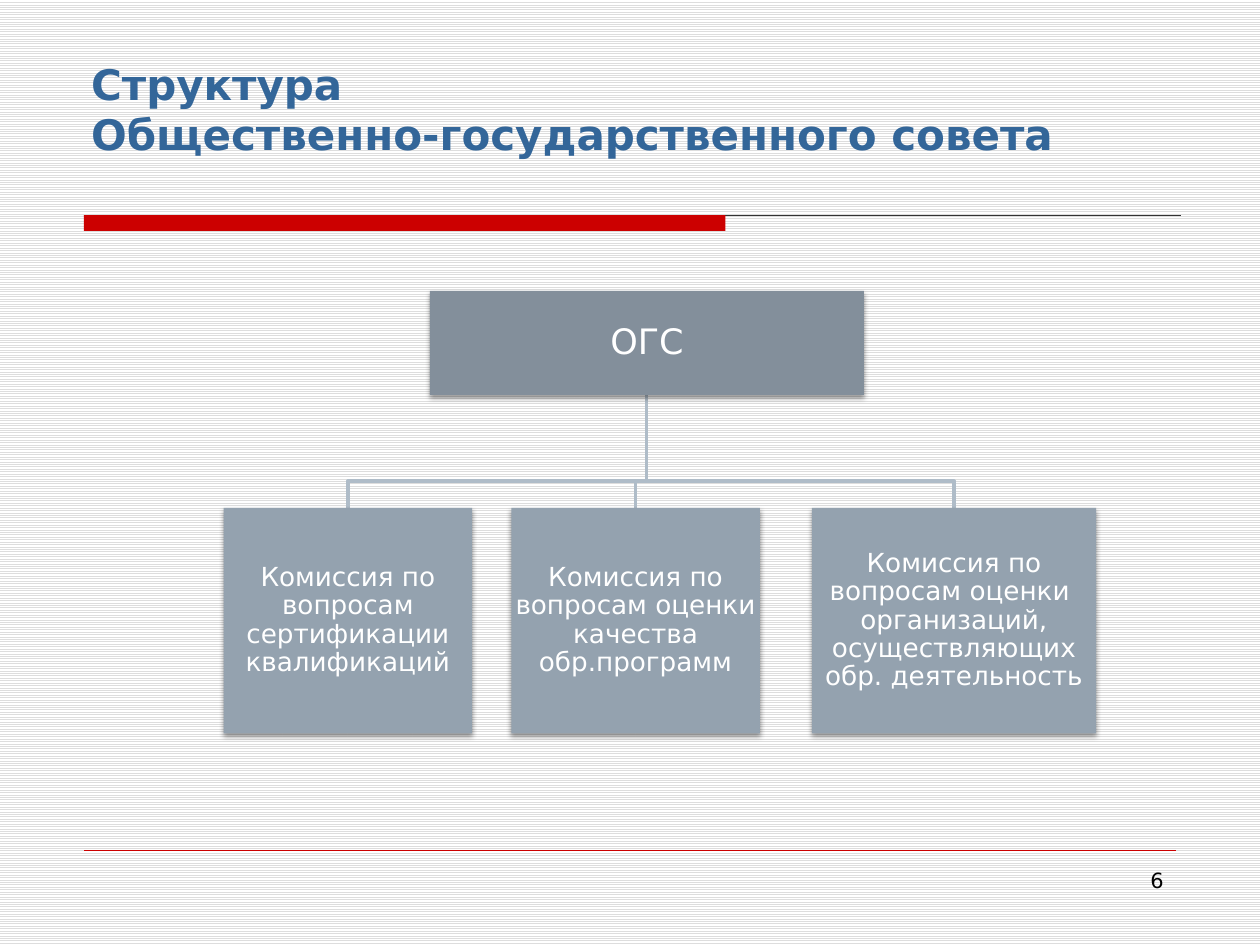
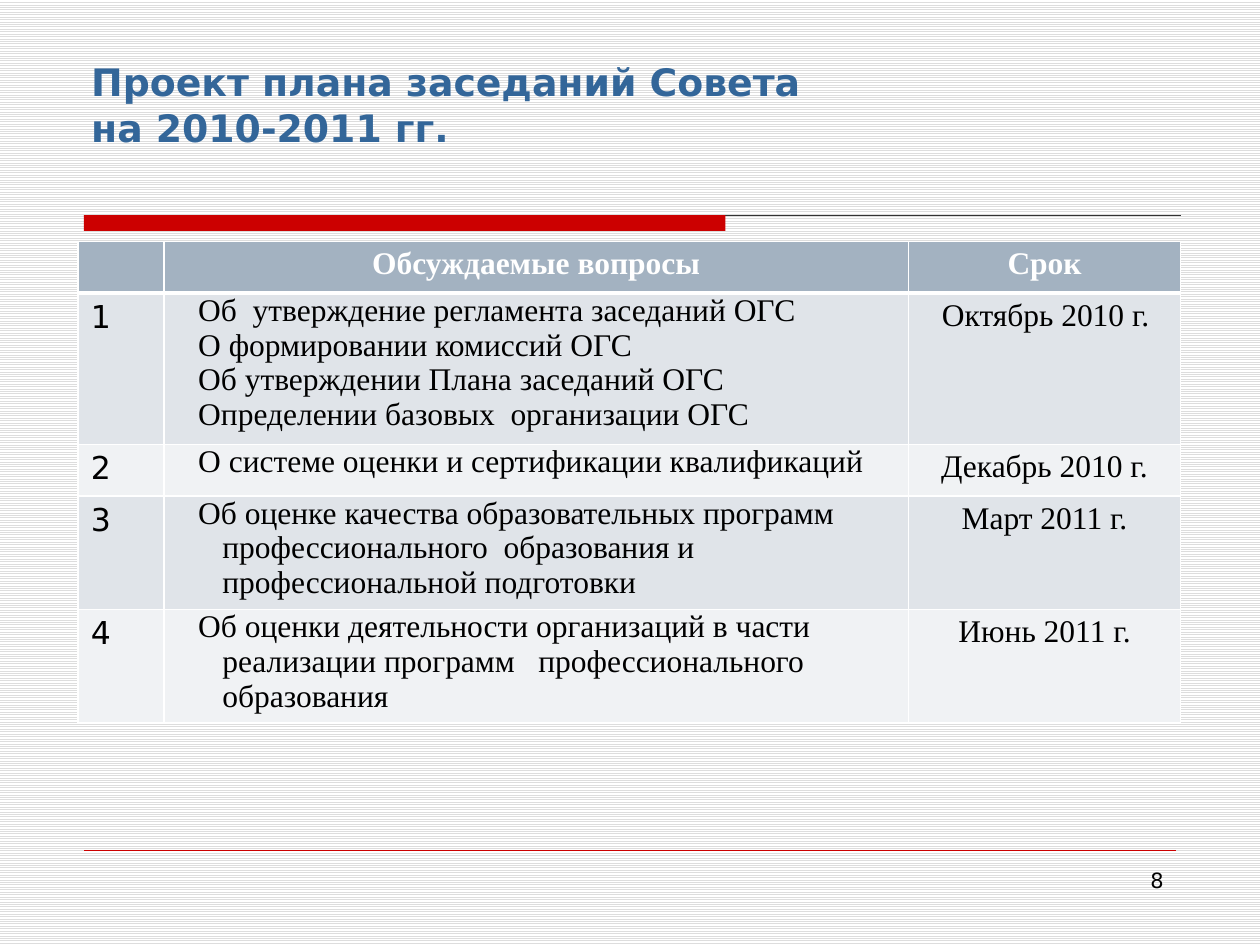
"""Build two slides on a public council: its structure and its meeting plan."""
from lxml.etree import SubElement
from pptx import Presentation
from pptx.dml.color import RGBColor
from pptx.enum.dml import MSO_PATTERN
from pptx.enum.shapes import MSO_CONNECTOR, MSO_SHAPE
from pptx.enum.text import MSO_ANCHOR, PP_ALIGN
from pptx.oxml import parse_xml
from pptx.oxml.ns import nsdecls, qn
from pptx.util import Pt

HUES = {
    "title": "336699", "red": "CC0000", "rule": "333333", "stripe": "DDDDDD",
    "white": "FFFFFF", "black": "000000", "head": "A3B2C1", "odd": "E0E4E9",
    "even": "F0F2F4", "top": "838F9B", "box": "94A2AF", "link": "AFBCC8",
}
HUE = {name: RGBColor.from_string(code) for name, code in HUES.items()}
SANS, SERIF = "DejaVu Sans", "Times New Roman"
LEFT, CENTER, RIGHT = PP_ALIGN.LEFT, PP_ALIGN.CENTER, PP_ALIGN.RIGHT


def style(frame, size, hue, font=SANS, bold=False, align=LEFT, space=1.0):
    """Format every paragraph of a text frame."""
    frame.word_wrap = True
    for para in frame.paragraphs:
        para.alignment = align
        para.line_spacing = space
        for run in para.runs:
            run.font.size = Pt(size)
            run.font.name = font
            run.font.bold = bold
            run.font.color.rgb = HUE[hue]


def page(title, size, high, number):
    """Add a slide with its title, bar, rules and number."""
    slide = prs.slides.add_slide(prs.slide_layouts[6])
    for end, level, hue, width in [(674.8, 123, "rule", 0.75), (672, 486, "red", 0.25)]:
        rule = slide.shapes.add_connector(
            MSO_CONNECTOR.STRAIGHT, Pt(48), Pt(level), Pt(end), Pt(level))
        rule.line.color.rgb = HUE[hue]
        rule.line.width = Pt(width)
        SubElement(rule._element.spPr, qn("a:effectLst"))
    bar = slide.shapes.add_shape(MSO_SHAPE.RECTANGLE, Pt(48), Pt(123), Pt(366.5), Pt(9))
    bar.shadow.inherit = False
    bar.fill.solid()
    bar.fill.fore_color.rgb = HUE["red"]
    bar.line.fill.background()
    head = slide.shapes.add_textbox(Pt(45), Pt(24), Pt(630), Pt(high)).text_frame
    head.text = title
    head.vertical_anchor = MSO_ANCHOR.BOTTOM
    style(head, size, "title", bold=True)
    foot = slide.shapes.add_textbox(Pt(516), Pt(492), Pt(156), Pt(37)).text_frame
    foot.text = number
    style(foot, 12, "black", align=RIGHT)
    return slide


prs = Presentation()
prs.slide_width, prs.slide_height = Pt(720), Pt(540)
back = prs.slide_master.background.fill
back.patterned()
back.pattern = MSO_PATTERN.LIGHT_HORIZONTAL
back.fore_color.rgb = HUE["stripe"]
back.back_color.rgb = HUE["white"]

slide = page("Структура\vОбщественно-государственного совета", 24, 70.5, "6")
STEM, BEND, ROW = 369.5, 275, 290.3
boxes = [
    ("ОГС", 245.7, 166.2, 248, 59.5, 20, "top"),
    ("Комиссия по вопросам сертификации квалификаций", 127.8, ROW, 142, 128.8, 15, "box"),
    ("Комиссия по вопросам оценки качества обр.программ", 292.2, ROW, 142, 128.8, 15, "box"),
    ("Комиссия по вопросам оценки  организаций, осуществляющих обр. деятельность",
     463.9, ROW, 162.5, 128.8, 15, "box"),
]
for text, left, top, wide, high, size, hue in boxes[1:]:
    mid = left + wide / 2
    pen = slide.shapes.build_freeform(Pt(STEM), Pt(225.5))
    pen.add_line_segments(
        [(Pt(STEM), Pt(BEND)), (Pt(mid), Pt(BEND)), (Pt(mid), Pt(ROW))], close=False)
    link = pen.convert_to_shape()
    link.shadow.inherit = False
    link.fill.background()
    link.line.color.rgb = HUE["link"]
    link.line.width = Pt(2)
for text, left, top, wide, high, size, hue in boxes:
    box = slide.shapes.add_shape(MSO_SHAPE.RECTANGLE, Pt(left), Pt(top), Pt(wide), Pt(high))
    box.fill.solid()
    box.fill.fore_color.rgb = HUE[hue]
    box.line.fill.background()
    box.shadow.inherit = False
    glow = SubElement(
        box._element.spPr.find(qn("a:effectLst")), qn("a:outerShdw"),
        blurRad=str(Pt(3.1)), dist=str(Pt(1.6)), dir="5400000", rotWithShape="0")
    shade = SubElement(glow, qn("a:srgbClr"), val=HUES["black"])
    SubElement(shade, qn("a:alpha"), val="38000")
    frame = box.text_frame
    frame.text = text
    frame.vertical_anchor = MSO_ANCHOR.MIDDLE
    frame.margin_left = frame.margin_right = Pt(0.8)
    frame.margin_top = frame.margin_bottom = Pt(0.8)
    style(frame, size, "white", align=CENTER, space=0.9)

slide = page("Проект плана заседаний Совета\vна 2010-2011 гг.", 21.6, 65, "8")
plan = [
    ("", "Обсуждаемые вопросы", "Срок"),
    ("1", "Об  утверждение регламента заседаний ОГС\nО формировании комиссий ОГС\n"
     "Об утверждении Плана заседаний ОГС\nОпределении базовых  организации ОГС",
     "Октябрь 2010 г."),
    ("2", "О системе оценки и сертификации квалификаций", "Декабрь 2010 г."),
    ("3", "Об оценке качества образовательных программ профессионального  "
     "образования и профессиональной подготовки", "Март 2011 г."),
    ("4", "Об оценки деятельности организаций в части реализации программ   "
     "профессионального образования", "Июнь 2011 г."),
]
table = slide.shapes.add_table(5, 3, Pt(44.7), Pt(138), Pt(630), Pt(258)).table
table.horz_banding = False
for col, wide in zip(table.columns, [49, 425.5, 155.5]):
    col.width = Pt(wide)
for row, high in zip(table.rows, [29.5, 80, 29.5, 59.5, 59.5]):
    row.height = Pt(high)
for i, line in enumerate(plan):
    for j, text in enumerate(line):
        cell = table.cell(i, j)
        cell.text = text
        cell.fill.solid()
        cell.fill.fore_color.rgb = HUE["head" if i == 0 else "odd" if i % 2 else "even"]
        if j:
            cell.margin_left = cell.margin_right = Pt(5.4)
            cell.margin_top = cell.margin_bottom = 0
        mid = i == 0 or (j == 2 and i > 1)
        style(cell.text_frame, 18, "black" if i else "white", SERIF if j else SANS,
              bold=i == 0, align=CENTER if mid else LEFT,
              space=1.15 if j == 2 or i == 0 else 1.0)
        if i and j and not mid:
            inset, hang = (36, -22.3) if j == 2 else (14.2, 0) if i == 1 else (28, -13.8)
            for para in cell.text_frame.paragraphs:
                props = para._p.get_or_add_pPr()
                props.set("marL", str(Pt(inset)))
                props.set("indent", str(Pt(hang)))
        edges = [("L", 1), ("R", 1), ("T", 3 if i == 1 else 1), ("B", 1 if i else 3)]
        for k, (side, width) in enumerate(edges):
            cell._tc.get_or_add_tcPr().insert(k, parse_xml(
                f'<a:ln{side} {nsdecls("a")} w="{Pt(width)}"><a:solidFill>'
                f'<a:srgbClr val="{HUES["white"]}"/></a:solidFill></a:ln{side}>'))
table.cell(2, 1).text_frame.paragraphs[0].space_after = Pt(6)

prs.save("out.pptx")
